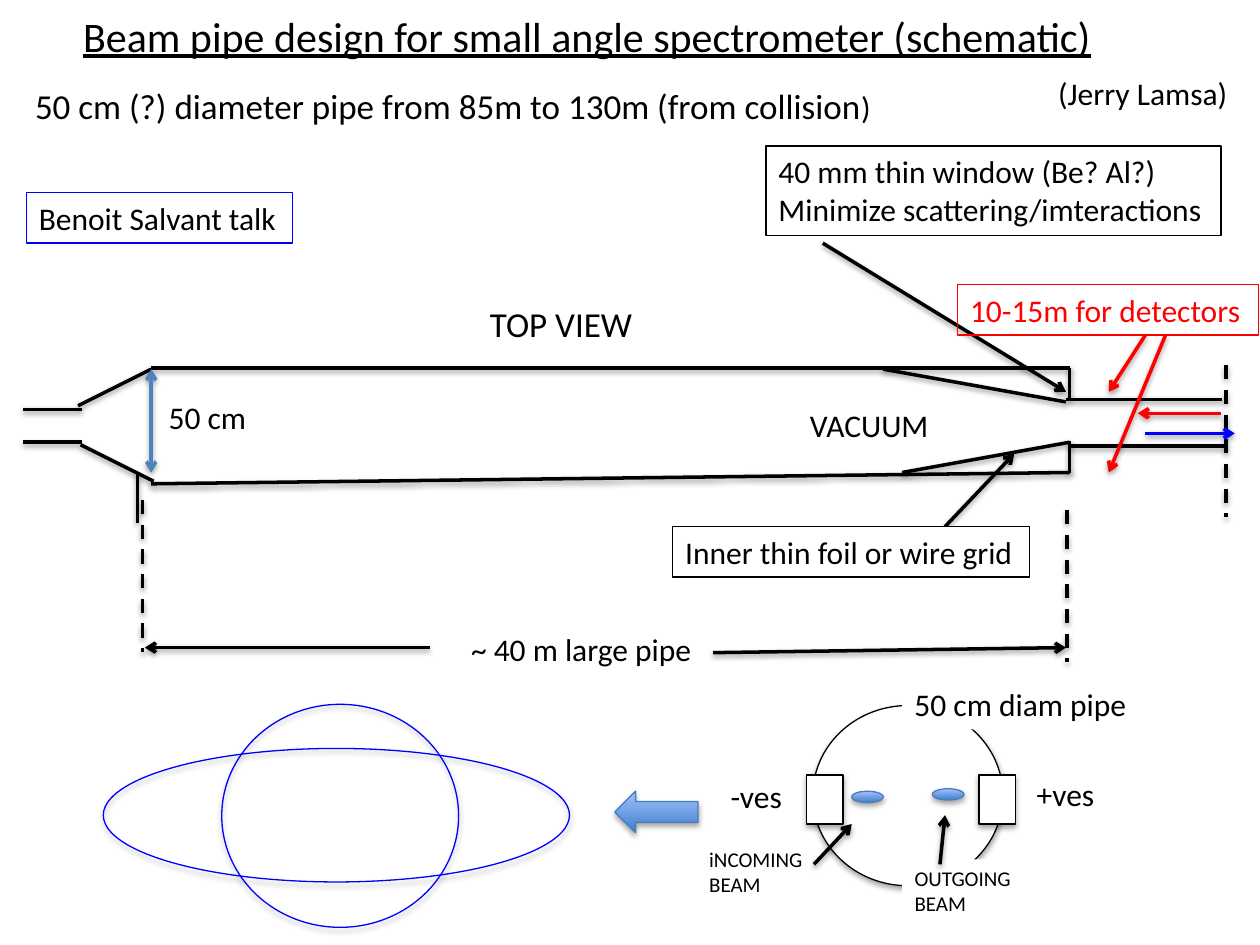
from dataclasses import dataclass

from lxml.etree import SubElement
from pptx import Presentation
from pptx.dml.color import RGBColor
from pptx.enum.dml import MSO_LINE
from pptx.enum.shapes import MSO_CONNECTOR, MSO_SHAPE
from pptx.enum.text import MSO_ANCHOR, MSO_AUTO_SIZE, PP_ALIGN
from pptx.oxml.ns import qn
from pptx.util import Inches, Pt

BLACK = RGBColor(0x00, 0x00, 0x00)
WHITE = RGBColor(0xFF, 0xFF, 0xFF)
RED = RGBColor(0xFF, 0x00, 0x00)
BLUE = RGBColor(0x00, 0x00, 0xFF)
STEEL = RGBColor(0x4F, 0x81, 0xBD)
FONT = "Calibri"
COLUMNS, ROWS = 100, 75


@dataclass
class Region:
    """Part of the slide; positions inside it are grid columns and rows from its corner."""
    slide: object
    column_width: float
    row_height: float
    left: float
    top: float

    def point(self, column, row):
        return (round((self.left + column) * self.column_width),
                round((self.top + row) * self.row_height))

    def box(self, column, row, columns, rows):
        return (*self.point(column, row),
                round(columns * self.column_width), round(rows * self.row_height))

    def line(self, start, end, color=BLACK, dashed=False, head=False, tail=False):
        """Line with the theme's soft shadow; head is at start, tail at end."""
        connector = self.slide.shapes.add_connector(
            MSO_CONNECTOR.STRAIGHT, *self.point(*start), *self.point(*end))
        connector.line.color.rgb = color
        connector.line.width = Pt(2)
        if dashed:
            connector.line.dash_style = MSO_LINE.DASH
        for wanted, tag in ((head, "a:headEnd"), (tail, "a:tailEnd")):
            if wanted:
                SubElement(connector.line._get_or_add_ln(), qn(tag), type="arrow")

    def label(self, box, text, size=18, color=BLACK, fill=None, border=None):
        label = self.slide.shapes.add_textbox(*self.box(*box))
        write(label.text_frame, text, size, color)
        if fill is not None:
            label.fill.solid()
            label.fill.fore_color.rgb = fill
        if border is not None:
            label.line.color.rgb = border
            label.line.width = Pt(0.75)
        return label

    def outline(self, kind, box, color, fill=None):
        outline = self.themed(kind, box)
        outline.line.color.rgb = color
        if fill is None:
            outline.fill.background()
        else:
            outline.fill.solid()
            outline.fill.fore_color.rgb = fill

    def themed(self, kind, box):
        """Shape with the theme's blue gradient and shadow."""
        shape = self.slide.shapes.add_shape(kind, *self.box(*box))
        shape.line.width = Pt(0.75)
        return shape


def write(frame, text, size, color=BLACK):
    frame.text = text
    frame.word_wrap = False
    frame.auto_size = MSO_AUTO_SIZE.SHAPE_TO_FIT_TEXT
    frame.vertical_anchor = MSO_ANCHOR.TOP
    for paragraph in frame.paragraphs:
        paragraph.alignment = PP_ALIGN.LEFT
        paragraph.font.name = FONT
        paragraph.font.size = Pt(size)
        paragraph.font.color.rgb = color


def add_header(region):
    title = region.slide.shapes.title
    title.left, title.top, title.width, title.height = region.box(5.6, 0.3, 86.2, 5)
    write(title.text_frame, "Beam pipe design for small angle spectrometer (schematic)", 24)
    title.text_frame.paragraphs[0].font.underline = True

    summary = region.label(
        (1.8, 6.2, 69, 4.4), "50 cm (?) diameter pipe from 85m to 130m (from collision", 20)
    closing = summary.text_frame.paragraphs[0].add_run()
    closing.text = ")"
    closing.font.size = Pt(18)

    region.label((83, 5.4, 15.6, 4), "(Jerry Lamsa)")
    region.label((2.1, 15.3, 21.1, 4), "Benoit Salvant talk", border=BLUE)
    region.label((60.8, 11.6, 36.1, 7.1),
                 "40 mm thin window (Be? Al?)\nMinimize scattering/imteractions", border=BLACK)


def add_pipe_walls(region):
    walls = [
        ((12, 9.2), (84.9, 9.2)), ((12, 18.4), (84.9, 17.5)),        # large pipe
        ((12, 9.3), (6.2, 12.2)), ((12.2, 18.2), (6.4, 15.3)),       # entry cone
        ((6.5, 12.5), (1.8, 12.5)), ((6.5, 15.1), (1.8, 15.1)),      # entry pipe
        ((84.9, 9.2), (84.9, 11.7)), ((84.9, 15), (84.9, 17.5)),     # thin window
        ((84.6, 11.7), (97, 11.7)), ((84.9, 15.4), (97.3, 15.4)),    # exit pipe
        ((70.1, 9.3), (84.6, 11.9)), ((71.6, 17.5), (84.9, 15.1)),   # inner foil
        ((10.9, 17.5), (10.9, 21.5)),
    ]
    for start, end in walls:
        region.line(start, end)


def add_top_view(region):
    add_pipe_walls(region)
    for column, row in ((97.3, 9), (11.3, 19.7), (84.7, 20.5)):
        region.line((column, row), (column, row + 12.05), dashed=True)

    region.label((37.9, 3.5, 13.5, 4.4), "TOP VIEW", 20)
    region.label((63.3, 11.7, 11.7, 4), "VACUUM", fill=WHITE)
    region.label((12.4, 11.1, 8.2, 4), "50 cm")
    region.line((12, 9.3), (12, 17.5), STEEL, head=True, tail=True)

    region.label((36.4, 29.5, 19.7, 4), "~ 40 m large pipe")
    region.line((34.1, 31.4), (11.5, 31.4), tail=True)
    region.line((56.6, 31.8), (84.6, 31.4), tail=True)

    region.line((75, 21.8), (80.5, 16), tail=True)
    region.label((53.4, 21.8, 28.3, 4), "Inner thin foil or wire grid", fill=WHITE, border=BLACK)
    region.line((65.3, -0.7), (84.6, 11.1), tail=True)

    region.label((76, 2.6, 23.9, 4), "10-15m for detectors", color=RED, border=RED)
    region.line((90.9, 6.6), (88, 11.1), RED, tail=True)
    region.line((92.5, 6.6), (88, 17.5), RED, tail=True)
    region.line((96.9, 12.8), (90.3, 12.8), RED, tail=True)
    region.line((90.9, 14.4), (98, 14.4), BLUE, tail=True)


def add_beam_profile(region):
    region.outline(MSO_SHAPE.OVAL, (0, 3.5, 37, 10.6), BLUE)
    region.outline(MSO_SHAPE.OVAL, (9.4, 0, 18.8, 17.7), BLUE)


def add_cross_section(region):
    region.outline(MSO_SHAPE.OVAL, (15.7, 2.1, 15.1, 14.3), BLACK, WHITE)
    for detector in (15.2, 28.9):
        region.outline(MSO_SHAPE.RECTANGLE, (detector, 7.6, 2.9, 3.9), BLACK, WHITE)
    for beam_column, beam_row in ((18.8, 8.9), (25.2, 8.7)):
        region.themed(MSO_SHAPE.OVAL, (beam_column, beam_row, 2.5, 0.9))
    region.themed(MSO_SHAPE.LEFT_ARROW, (0, 8.9, 6.6, 3.3))

    region.label((8.2, 7.3, 6.2, 4), "-ves")
    region.label((32.5, 7.1, 6.7, 4), "+ves")
    region.label((22.8, 0, 19, 4), "50 cm diam pipe", fill=WHITE)
    region.label((22.8, 14.3, 9.8, 5), "OUTGOING\vBEAM", 12, fill=WHITE)
    region.label((6.5, 12.8, 9.5, 5), "iNCOMING\vBEAM", 12, fill=WHITE)
    region.line((15.8, 14.7), (18.8, 11.5), tail=True)
    region.line((25.8, 14.7), (26.2, 10.8), tail=True)


def main():
    presentation = Presentation()
    presentation.slide_width, presentation.slide_height = Inches(10), Inches(7.5)
    title_only = presentation.slide_layouts[5]
    slide = presentation.slides.add_slide(title_only)
    grid = (slide, presentation.slide_width / COLUMNS, presentation.slide_height / ROWS)

    add_header(Region(*grid, left=0, top=0))
    add_top_view(Region(*grid, left=0, top=20))
    add_beam_profile(Region(*grid, left=8.2, top=55.9))
    add_cross_section(Region(*grid, left=48.8, top=53.9))
    presentation.save("out.pptx")


if __name__ == "__main__":
    main()
